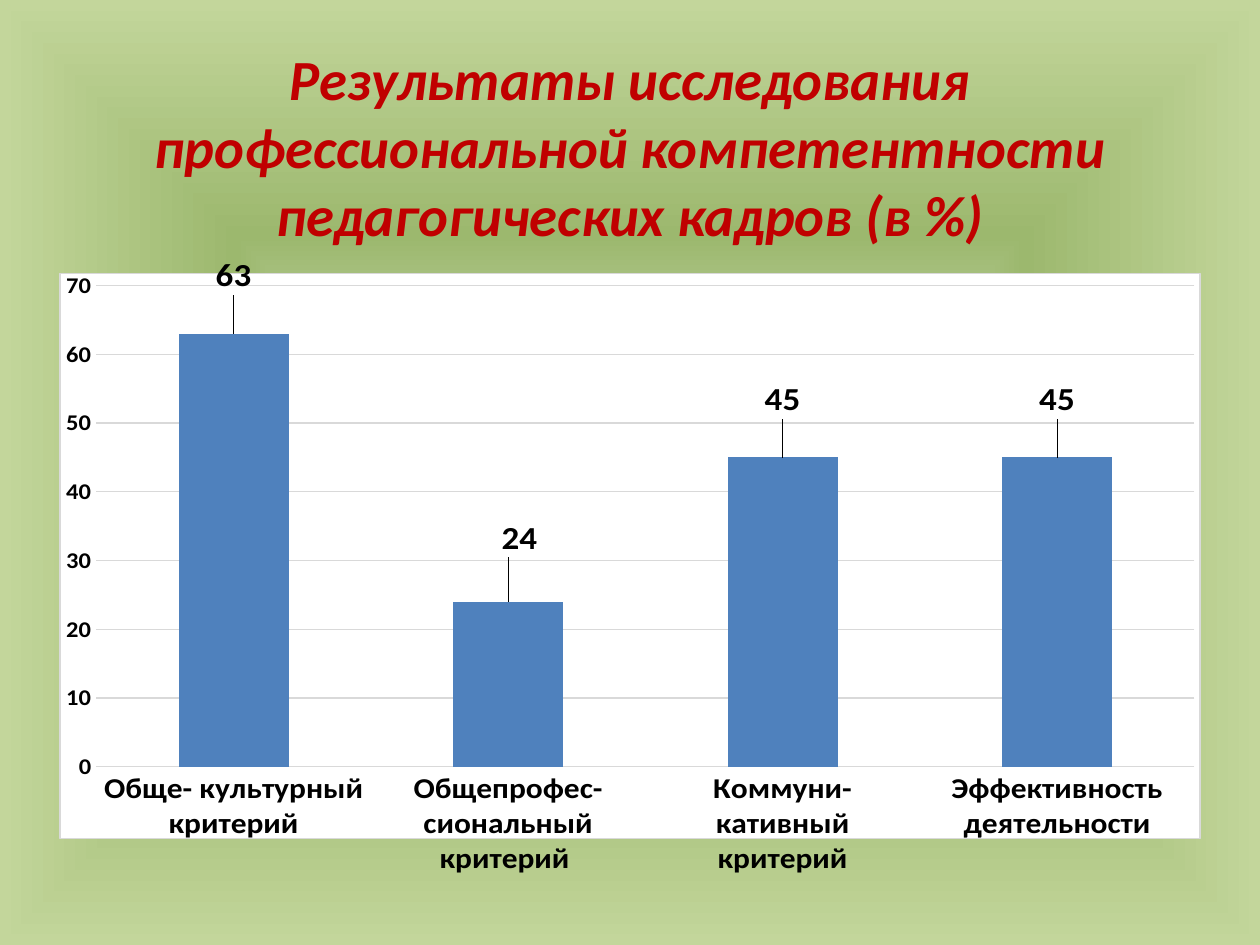
from lxml import etree
from pptx import Presentation
from pptx.chart.data import CategoryChartData
from pptx.dml.color import RGBColor
from pptx.enum.chart import XL_CHART_TYPE as ChartType, XL_LABEL_POSITION as LabelPosition
from pptx.enum.chart import XL_TICK_MARK as TickMark
from pptx.enum.text import MSO_ANCHOR as Anchor, PP_ALIGN as Align
from pptx.oxml import parse_xml
from pptx.oxml.ns import nsdecls, qn
from pptx.util import Inches, Pt

# Content
TITLE = "Результаты исследования профессиональной компетентности педагогических кадров (в %)"
# category, value, label shift as a share of the chart (x, y)
RESULTS = [
    ("Обще- культурный критерий", 63, (0, -0.06)),
    ("Общепрофес- сиональный критерий ", 24, (0.01, -0.07)),
    ("Коммуни- кативный критерий", 45, (0, -0.06)),
    ("Эффективность деятельности", 45, (0, -0.06)),
]
PLOT_AREA = {"x": 0.032, "y": 0.022, "w": 0.963, "h": 0.851}
COLORS = {"title": "C00000", "text": "000000", "bar": "4F81BD",
          "grid": "D9D9D9", "paper": "FFFFFF"}
BACKGROUND = [(0, "DDEBCF"), (50, "9CB86E"), (100, "C3D69B")]
FONT = "Calibri"


def style_font(font, size, color="text", bold=True, italic=False):
    font.name, font.size, font.bold, font.italic = FONT, Pt(size), bold, italic
    font.color.rgb = RGBColor.from_string(COLORS[color])


def add_text(page, text, at, size, color, italic=False):
    box = page.shapes.add_textbox(*map(Inches, at))
    frame = box.text_frame
    frame.word_wrap = True
    frame.vertical_anchor = Anchor.TOP
    para = frame.paragraphs[0]
    para.alignment = Align.CENTER
    span = para.add_run()
    span.text = text
    style_font(span.font, size, color, italic=italic)


def set_background(page):
    stops = "".join(f'<a:gs pos="{share * 1000}"><a:srgbClr val="{color}"/></a:gs>'
                    for share, color in BACKGROUND)
    page.background.fill.solid()
    props = page._element.cSld.find(qn("p:bg")).find(qn("p:bgPr"))
    props.replace(props[0], parse_xml(
        f'<a:gradFill {nsdecls("a")} rotWithShape="1"><a:gsLst>{stops}</a:gsLst>'
        '<a:path path="shape"><a:fillToRect l="50000" t="50000" r="50000" b="50000"/>'
        '</a:path></a:gradFill>'))


def make_layout(target="", **sizes):
    parts = f'<c:layoutTarget val="{target}"/>' if target else ""
    if target:
        parts += '<c:xMode val="edge"/><c:yMode val="edge"/>'
    parts += "".join(f'<c:{name} val="{value}"/>' for name, value in sizes.items())
    return parse_xml(f'<c:layout {nsdecls("c")}><c:manualLayout>{parts}'
                     '</c:manualLayout></c:layout>')


def place_layout(parent, layout, index):
    for old in parent.findall(qn("c:layout")):
        parent.remove(old)
    parent.insert(index, layout)


def add_results_chart(page, at):
    data = CategoryChartData()
    data.categories = [name for name, _, _ in RESULTS]
    data.add_series("Series 1", [value for _, value, _ in RESULTS])
    chart = page.shapes.add_chart(
        ChartType.COLUMN_CLUSTERED, *map(Inches, at), data).chart
    chart.has_legend = chart.has_title = False
    style_font(chart.font, 10, bold=False)

    # Plot area and chart frame
    space = chart._chartSpace
    place_layout(space.chart.plotArea, make_layout("inner", **PLOT_AREA), 0)
    frame = parse_xml(
        f'<c:spPr {nsdecls("c", "a")}><a:solidFill><a:srgbClr val="{COLORS["paper"]}"/>'
        f'</a:solidFill><a:ln w="{Pt(0.75)}"><a:solidFill><a:srgbClr val="{COLORS["grid"]}"/>'
        '</a:solidFill></a:ln></c:spPr>')
    space.chart.addnext(frame)

    # Axes
    for axis, size in ((chart.category_axis, 18), (chart.value_axis, 14)):
        axis.major_tick_mark = axis.minor_tick_mark = TickMark.NONE
        axis.format.line.fill.background()
        style_font(axis.tick_labels.font, size)
    value_axis = chart.value_axis
    value_axis.minimum_scale, value_axis.maximum_scale, value_axis.major_unit = 0, 70, 10
    grid = value_axis.major_gridlines.format.line
    grid.width = Pt(0.75)
    grid.color.rgb = RGBColor.from_string(COLORS["grid"])

    # Columns and their raised labels
    plot = chart.plots[0]
    plot.gap_width = 150
    plot.vary_by_categories = False
    series = plot.series[0]
    series.format.fill.solid()
    series.format.fill.fore_color.rgb = RGBColor.from_string(COLORS["bar"])
    labels = series.data_labels
    labels.show_value = True
    labels.position = LabelPosition.OUTSIDE_END
    style_font(labels.font, 20)
    for index, (_, _, (dx, dy)) in enumerate(RESULTS):
        label = series.points[index].data_label
        label.position = LabelPosition.OUTSIDE_END
        style_font(label.font, 20)
        element = labels._element.findall(qn("c:dLbl"))[index]
        place_layout(element, make_layout(x=dx, y=dy), 1)


def main():
    deck = Presentation()
    deck.slide_width, deck.slide_height = Inches(10), Inches(7.5)
    page = deck.slides.add_slide(deck.slide_layouts[6])
    set_background(page)
    add_text(page, TITLE, (0.5, 0.3, 9, 1.25), 32.4, "title", italic=True)
    add_results_chart(page, (0.47, 2.03, 9.06, 4.92))
    deck.save("out.pptx")


if __name__ == "__main__":
    main()
